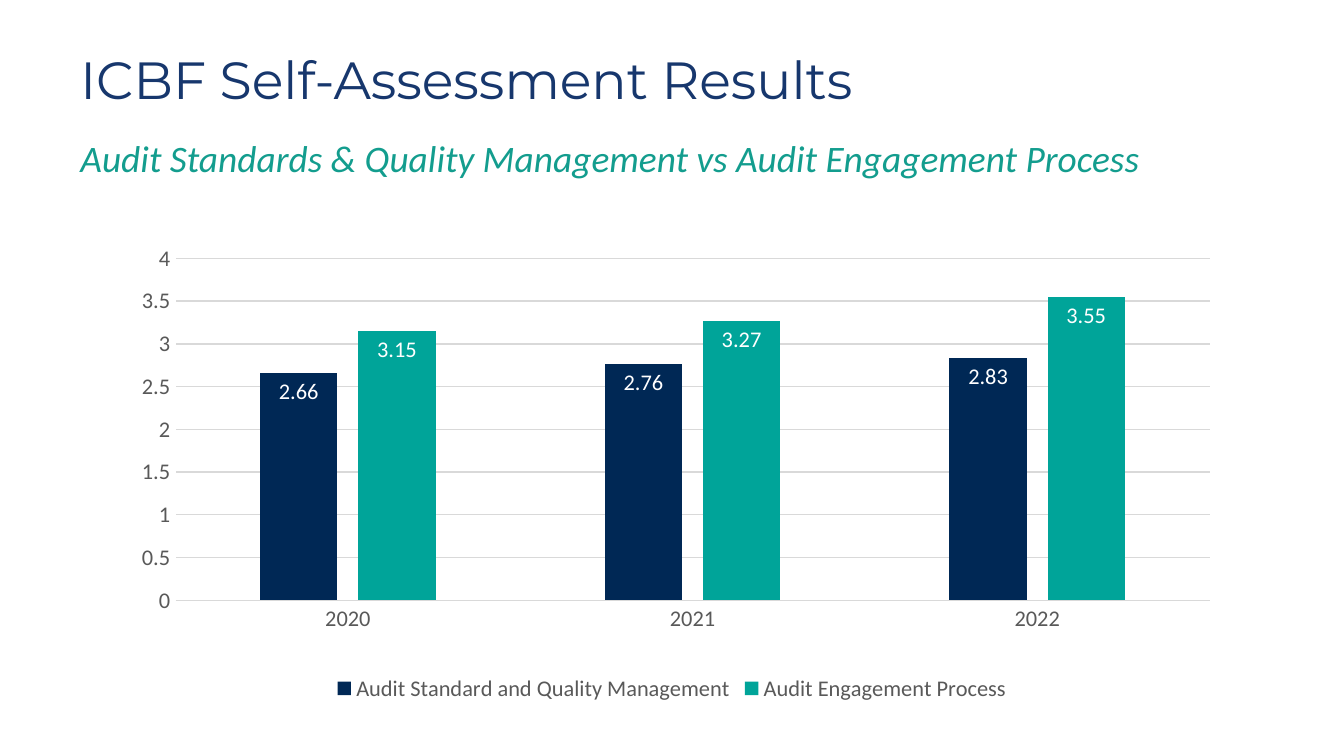
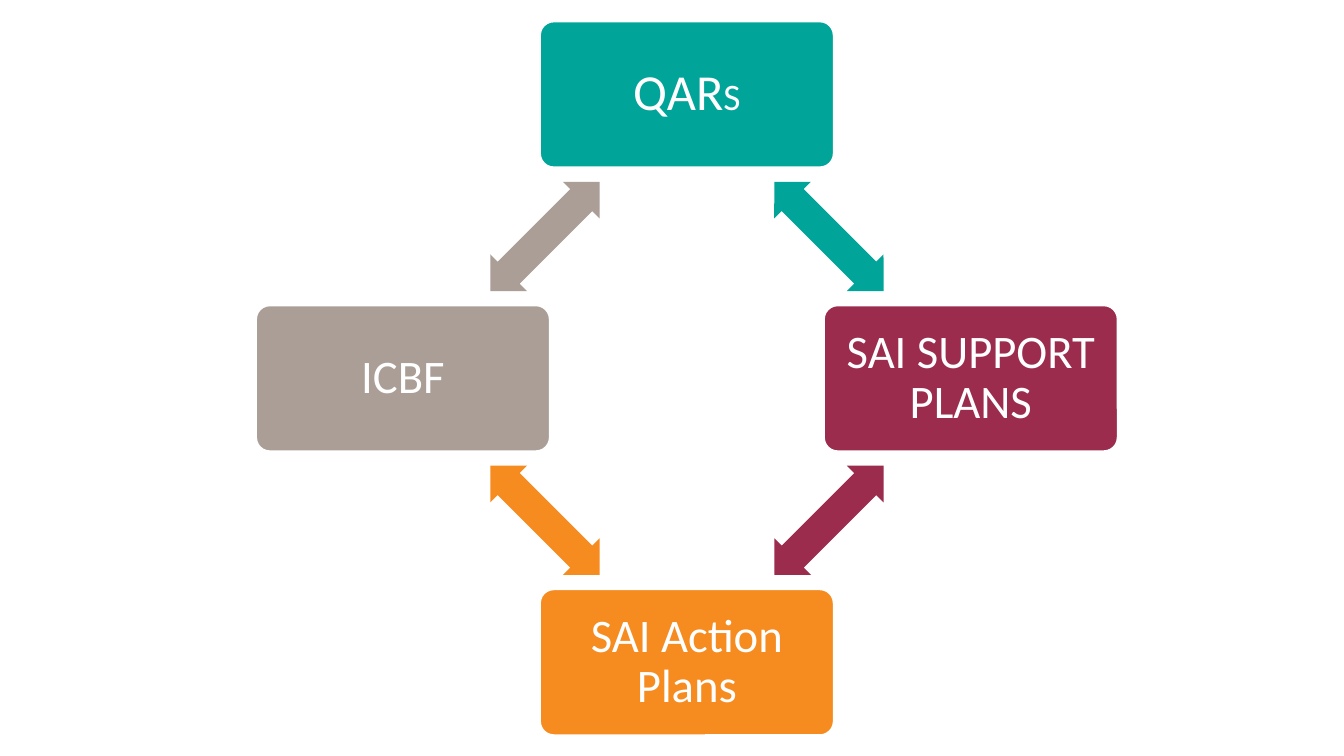
from lxml.etree import SubElement
from pptx import Presentation
from pptx.chart.data import CategoryChartData
from pptx.dml.color import RGBColor
from pptx.enum.chart import XL_CHART_TYPE, XL_LABEL_POSITION, XL_LEGEND_POSITION, XL_TICK_MARK
from pptx.enum.shapes import MSO_SHAPE
from pptx.enum.text import MSO_ANCHOR, PP_ALIGN
from pptx.oxml.ns import qn
from pptx.util import Pt

HUES = {
    "title": "17376D", "sub": "139D8E", "navy": "002855", "teal": "00A499",
    "wine": "9B2C4E", "gold": "F68B1F", "stone": "AA9E97",
    "grid": "D9D9D9", "label": "595959", "white": "FFFFFF",
}
BODY = "Calibri"
HEAD = "Montserrat"


def hue(name):
    return RGBColor.from_string(HUES[name])


def style(font, size, color, face=BODY, italic=False):
    font.size = Pt(size)
    font.name = face
    font.italic = italic
    font.bold = False
    font.color.rgb = hue(color)


def write(frame, *runs, size=25, color="white", face=BODY, italic=False,
          align=PP_ALIGN.LEFT, anchor=MSO_ANCHOR.MIDDLE, lead=1.0, pad=(7.2, 3.6)):
    frame.word_wrap = True
    frame.vertical_anchor = anchor
    frame.margin_left = frame.margin_right = Pt(pad[0])
    frame.margin_top = frame.margin_bottom = Pt(pad[1])
    para = frame.paragraphs[0]
    para.alignment = align
    para.line_spacing = lead
    for item in runs:
        words, points = item if isinstance(item, tuple) else (item, size)
        run = para.add_run()
        run.text = words
        style(run.font, points, color, face, italic)


def add_text(slide, box, words, **form):
    shape = slide.shapes.add_textbox(*map(Pt, box))
    write(shape.text_frame, words, **form)


def add_block(slide, kind, mid, size, color, adjust):
    left, top = (mid[i] - size[i] / 2 for i in range(2))
    shape = slide.shapes.add_shape(kind, Pt(left), Pt(top), Pt(size[0]), Pt(size[1]))
    shape.shadow.inherit = False
    shape.fill.solid()
    shape.fill.fore_color.rgb = hue(color)
    shape.line.fill.background()
    for i, value in enumerate(adjust):
        shape.adjustments[i] = value
    return shape


def set_plot(chart, x, y, w, h):
    plot = chart._chartSpace.chart.plotArea
    for old in plot.findall(qn("c:layout")):
        plot.remove(old)
    layout = SubElement(plot, qn("c:layout"))
    plot.insert(0, layout)
    manual = SubElement(layout, qn("c:manualLayout"))
    parts = [("layoutTarget", "inner"), ("xMode", "edge"), ("yMode", "edge"),
             ("x", x), ("y", y), ("w", w), ("h", h)]
    for tag, value in parts:
        SubElement(manual, qn("c:" + tag)).set("val", str(value))


def set_axis(axis):
    axis.major_tick_mark = axis.minor_tick_mark = XL_TICK_MARK.NONE
    style(axis.tick_labels.font, 12, "label")


def set_line(line):
    line.color.rgb = hue("grid")
    line.width = Pt(0.75)


def add_bars(slide, box, cats, rows):
    data = CategoryChartData()
    data.categories = cats
    for name, values, _ in rows:
        data.add_series(name, values)
    kind = XL_CHART_TYPE.COLUMN_CLUSTERED
    chart = slide.shapes.add_chart(kind, *map(Pt, box), data).chart
    style(chart.font, 10, "label")
    chart.has_title = False
    chart.has_legend = True
    chart.legend.position = XL_LEGEND_POSITION.BOTTOM
    chart.legend.include_in_layout = False
    style(chart.legend.font, 12, "label")

    set_axis(chart.category_axis)
    set_line(chart.category_axis.format.line)
    scale = chart.value_axis
    set_axis(scale)
    scale.minimum_scale, scale.maximum_scale, scale.major_unit = 0, 4, 0.5
    scale.format.line.fill.background()
    set_line(scale.major_gridlines.format.line)

    plot = chart.plots[0]
    plot.gap_width = 219
    plot.overlap = -27
    plot.vary_by_categories = False
    for bars, (_, _, color) in zip(plot.series, rows):
        bars.format.fill.solid()
        bars.format.fill.fore_color.rgb = hue(color)
        bars.invert_if_negative = False
        tags = bars.data_labels
        tags.show_value = True
        tags.position = XL_LABEL_POSITION.INSIDE_END
        style(tags.font, 12, "white")
    set_plot(chart, 0.055, 0.041, 0.927, 0.731)


def add_cycle(slide, mid, reach, nodes):
    steps = [(0, -1), (1, 0), (0, 1), (-1, 0)]
    spots = [(mid[0] + reach * x, mid[1] + reach * y) for x, y in steps]
    for i, (color, runs) in enumerate(nodes):
        here, after = spots[i], spots[(i + 1) % len(spots)]
        card = add_block(slide, MSO_SHAPE.ROUNDED_RECTANGLE, here, (158.4, 79.2), color, [0.1])
        card.line.color.rgb = hue("white")
        card.line.width = Pt(2)
        write(card.text_frame, *runs, align=PP_ALIGN.CENTER, lead=0.9, pad=(7.2, 7.2))
        half = [(a + b) / 2 for a, b in zip(here, after)]
        arrow = add_block(slide, MSO_SHAPE.LEFT_RIGHT_ARROW, half, (82.8, 27.8), color, [0.6, 0.5])
        arrow.rotation = 45 + 90 * i


def main():
    deck = Presentation()
    deck.slide_width, deck.slide_height = Pt(720), Pt(405)
    blank = deck.slide_layouts[6]

    slide = deck.slides.add_slide(blank)
    add_text(slide, (36, 16.5, 526, 57), "ICBF Self-Assessment Results",
             size=28, color="title", face=HEAD, lead=0.8)
    add_text(slide, (36, 69, 648, 24),
             "Audit Standards & Quality Management vs Audit Engagement Process",
             size=20, color="sub", italic=True, anchor=MSO_ANCHOR.TOP)
    add_bars(slide, (61.2, 128.2, 597.6, 250.6), ["2020", "2021", "2022"], [
        ("Audit Standard and Quality Management", (2.66, 2.76, 2.83), "navy"),
        ("Audit Engagement Process", (3.15, 3.27, 3.55), "teal"),
    ])

    slide = deck.slides.add_slide(blank)
    add_cycle(slide, (368, 202.7), 152.1, [
        ("teal", [("QAR", 27), ("S", 20)]),
        ("wine", ["SAI SUPPORT PLANS"]),
        ("gold", ["SAI Action Plans"]),
        ("stone", ["ICBF"]),
    ])
    deck.save("out.pptx")


if __name__ == "__main__":
    main()
